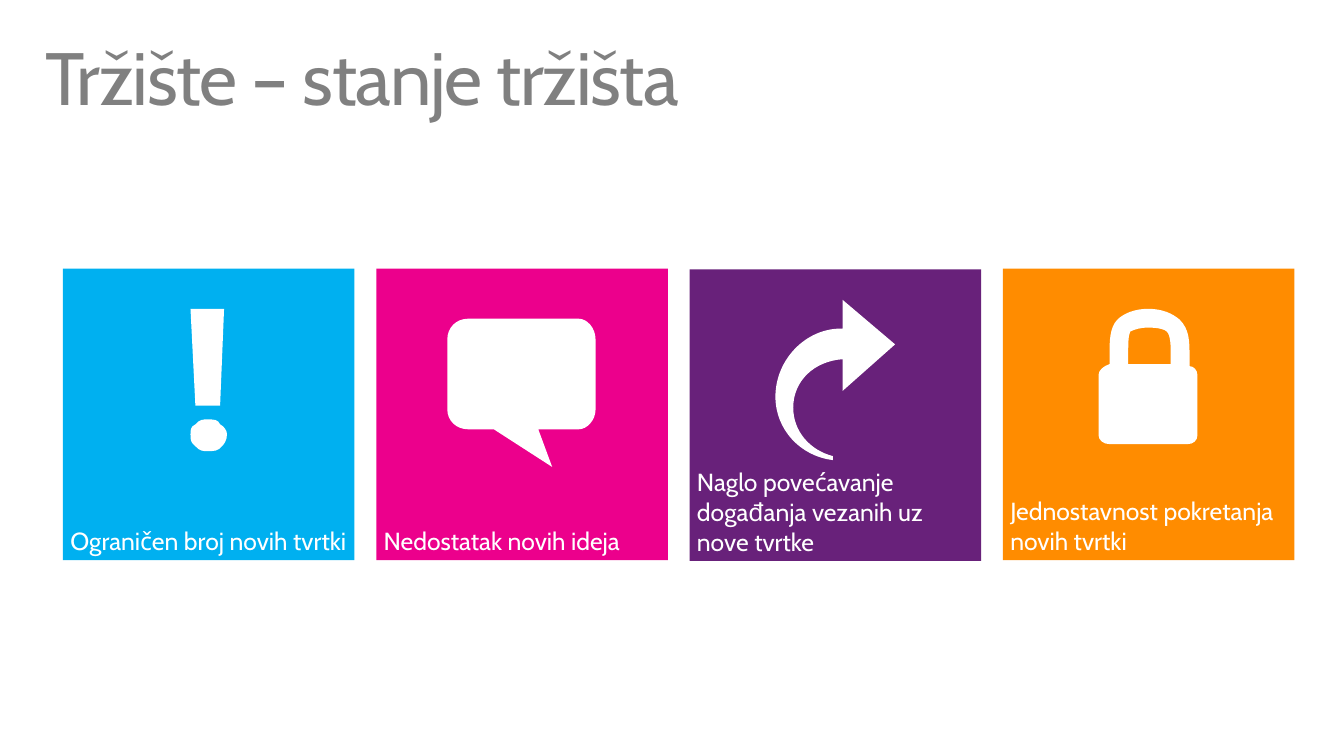
from dataclasses import dataclass

from lxml import etree
from pptx import Presentation
from pptx import util as u
from pptx.dml import color
from pptx.enum import shapes, text
from pptx.oxml import ns

COLORS = {
    "title": "808080",
    "white": "FFFFFF",
    "blue": "00B0F0",
    "pink": "EC008C",
    "purple": "68217A",
    "orange": "FF8C00",
}
FONT = "Cabin"
TILE_LEFT, TILE_TOP = 45.9, 195.7
TILE_SIZE, TILE_PITCH = 212.4, 228.24
ICON_TOP = 196.2

Segment = tuple[float, ...]
Contour = list[Segment]


@dataclass
class Tile:
    label: str
    fill: str
    icon: list[Contour]
    top: float = TILE_TOP


EXCLAMATION: list[Contour] = [
    [(117.4, 28.8), (114.5, 99.4), (96.5, 99.4), (92.9, 28.8)],
    [
        (119.5, 120.2),
        (119.5, 124.6, 117.4, 127.4, 115.9, 128.9),
        (113, 132.5, 110.2, 132.5, 105.1, 132.5),
        (102.2, 132.5, 99.4, 132.5, 96.5, 128.9),
        (92.9, 126, 92.9, 124.6, 92.9, 120.2),
        (92.9, 117.4, 92.9, 114.5, 96.5, 113),
        (99.4, 109.4, 102.2, 109.4, 105.1, 109.4),
        (110.2, 109.4, 113, 109.4, 114.5, 113),
        (117.4, 114.5, 119.5, 117.4, 119.5, 120.2),
    ],
]
SPEECH: list[Contour] = [
    [
        (147.6, 36), (67, 36),
        (58.3, 36, 51.8, 42.5, 51.8, 51.1), (51.8, 102.2),
        (51.8, 110.2, 58.3, 116.6, 67, 116.6),
        (85.7, 116.6), (128.2, 144), (118.1, 116.6), (147.6, 116.6),
        (153.4, 116.6, 159.8, 110.2, 159.8, 102.2), (159.8, 51.1),
        (159.8, 42.5, 153.4, 36, 147.6, 36),
    ]
]
ARROW: list[Contour] = [
    [
        (104.4, 136.1),
        (87.8, 131.8, 75.6, 118.1, 75.6, 100.8),
        (75.6, 81.4, 90.7, 67, 111.6, 65.5),
        (111.6, 88.6), (149.8, 54.7), (111.6, 22.3), (111.6, 43.2), (110.2, 43.2),
        (85, 43.2, 62.6, 65.5, 62.6, 92.9),
        (62.6, 116.6, 80.6, 136.1, 104.4, 139),
    ]
]
PADLOCK: list[Contour] = [
    [
        (92.9, 45.4),
        (95.8, 43.9, 100.1, 42.5, 105.8, 42.5),
        (113.8, 42.5, 118.1, 43.9, 119.5, 45.4),
        (122.4, 48.2, 122.4, 56.2, 122.4, 63.4),
        (122.4, 69.1), (91.4, 69.1), (91.4, 61.9),
        (91.4, 54.7, 91.4, 48.2, 92.9, 45.4),
    ],
    [
        (136.1, 70.6), (136.1, 63.4),
        (136.1, 52.6, 136.1, 43.9, 128.9, 36.7),
        (123.8, 32.4, 116.6, 28.8, 105.8, 28.8),
        (95.8, 28.8, 87.8, 32.4, 83.5, 36.7),
        (77.8, 42.5, 77.8, 52.6, 77.8, 61.9), (77.8, 69.1),
        (73.4, 70.6, 69.8, 73.4, 69.8, 77), (69.8, 121),
        (69.8, 124.6, 73.4, 127.4, 77.8, 127.4), (134.6, 127.4),
        (139, 127.4, 141.8, 124.6, 141.8, 121), (141.8, 77),
        (141.8, 73.4, 139, 70.6, 136.1, 70.6),
    ],
]

TILES = [
    Tile("Ograničen broj novih tvrtki", "blue", EXCLAMATION),
    Tile("Nedostatak novih ideja", "pink", SPEECH),
    Tile("Naglo povećavanje događanja vezanih uz nove tvrtke", "purple", ARROW, 196.3),
    Tile("Jednostavnost pokretanja novih tvrtki", "orange", PADLOCK),
]


def rgb(name: str) -> color.RGBColor:
    return color.RGBColor.from_string(COLORS[name])


def paint(sp, fill: str) -> None:
    sp.shadow.inherit = False
    sp.fill.solid()
    sp.fill.fore_color.rgb = rgb(fill)
    sp.line.fill.background()


def write(sp, words: str, size: float, ink: str, inset: tuple[float, float], anchor):
    tf = sp.text_frame
    tf.word_wrap = True
    tf.vertical_anchor = anchor
    tf.margin_left = tf.margin_right = u.Pt(inset[0])
    tf.margin_top = tf.margin_bottom = u.Pt(inset[1])
    p = tf.paragraphs[0]
    p.alignment = text.PP_ALIGN.LEFT
    r = p.add_run()
    r.text = words
    r.font.name = FONT
    r.font.size = u.Pt(size)
    r.font.color.rgb = rgb(ink)
    return p, r


def add_icon(s, icon: list[Contour], left: float, top: float) -> None:
    fb = None
    for contour in icon:
        ends = [(u.Pt(left + seg[-2]), u.Pt(top + seg[-1])) for seg in contour]
        if fb is None:
            fb = s.shapes.build_freeform(*ends[0])
        else:
            fb.move_to(*ends[0])
        fb.add_line_segments(ends[1:], close=True)
    sp = fb.convert_to_shape()
    paint(sp, "white")
    segments = [seg for contour in icon for seg in contour[1:]]
    for seg, el in zip(segments, list(sp.element.iter(ns.qn("a:lnTo")))):
        if len(seg) == 6:
            el.tag = ns.qn("a:cubicBezTo")
            for i in (0, 1):
                pt = etree.Element(ns.qn("a:pt"))
                pt.set("x", str(u.Pt(left + seg[2 * i]) - sp.left))
                pt.set("y", str(u.Pt(top + seg[2 * i + 1]) - sp.top))
                el.insert(i, pt)


def add_tile(s, tile: Tile, left: float) -> None:
    sp = s.shapes.add_shape(
        shapes.MSO_SHAPE.RECTANGLE,
        u.Pt(left), u.Pt(tile.top), u.Pt(TILE_SIZE), u.Pt(TILE_SIZE),
    )
    paint(sp, tile.fill)
    write(sp, tile.label, 18, "white", (5.4, 3.6), text.MSO_ANCHOR.BOTTOM)


def main() -> None:
    prs = Presentation()
    prs.slide_width, prs.slide_height = u.Pt(979.2), u.Pt(550.8)
    s = prs.slides.add_slide(prs.slide_layouts[6])
    title = s.shapes.add_textbox(u.Pt(21.6), u.Pt(23), u.Pt(936), u.Pt(72))
    p, r = write(title, "Tržište – stanje tržišta", 54, "title", (11.5, 7.2), text.MSO_ANCHOR.TOP)
    p.line_spacing = 0.9
    r.font._element.set("spc", "-100")
    for i, tile in enumerate(TILES):
        left = TILE_LEFT + i * TILE_PITCH
        add_tile(s, tile, left)
        add_icon(s, tile.icon, left, ICON_TOP)
    prs.save("out.pptx")


if __name__ == "__main__":
    main()
